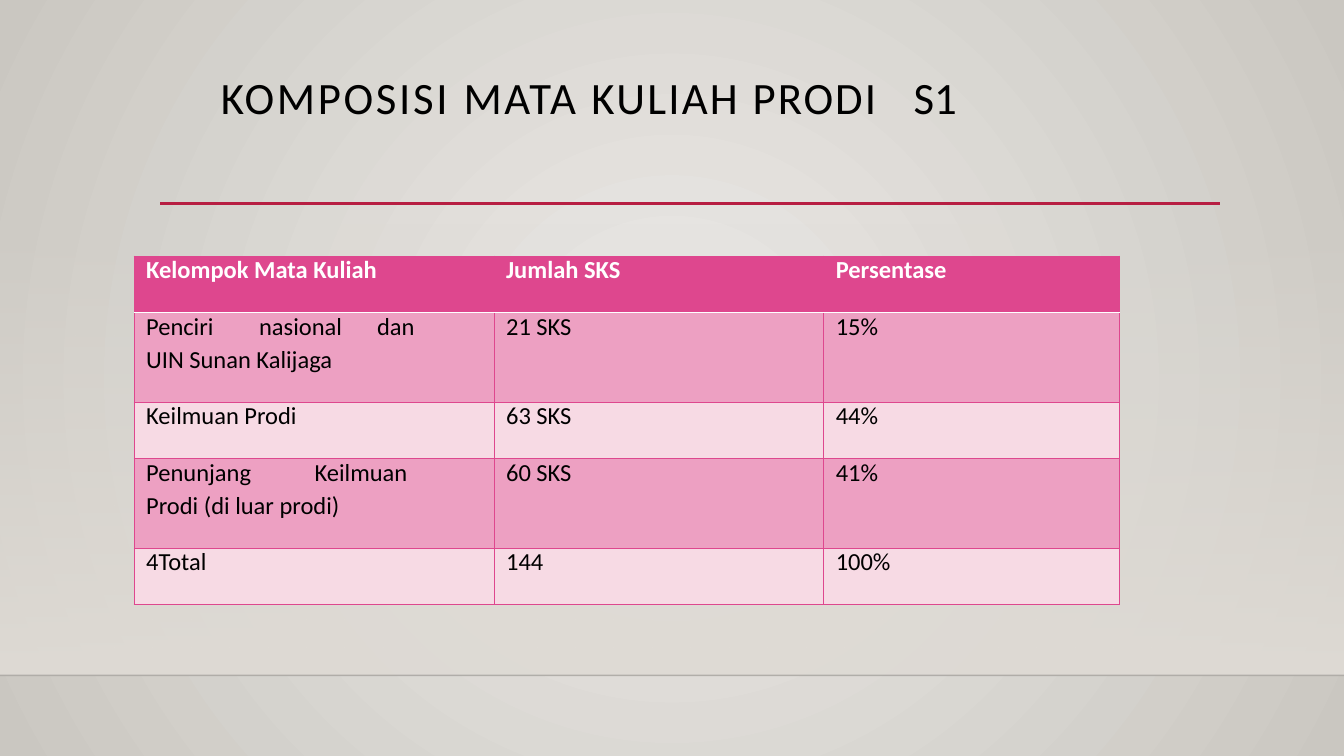
from dataclasses import dataclass

from lxml.etree import SubElement
from pptx import Presentation
from pptx.dml.color import RGBColor
from pptx.enum.shapes import MSO_CONNECTOR, MSO_SHAPE
from pptx.enum.text import MSO_ANCHOR, MSO_AUTO_SIZE, PP_ALIGN
from pptx.oxml import parse_xml
from pptx.oxml.ns import nsdecls, qn
from pptx.util import Inches, Pt


@dataclass(frozen=True)
class Theme:
    """Colours, font and type sizes of the slide."""
    font: str = "Calibri"
    title_size: float = 32
    table_size: float = 17.5
    text: str = "000000"
    white: str = "FFFFFF"
    accent: str = "B71E42"
    pink: str = "DE478E"
    pink_mid: str = "EDA0C2"
    pink_light: str = "F7DAE4"
    glow: str = "ECEAE7"
    edge: str = "CAC7C1"
    floor: str = "DFDBD5"


T = Theme()
TITLE = [("KOMPOSISI ", 1.9), ("MATA ", 1.8), ("KULIAH ", 1.6),
         ("PRODI", 1.4), (" ", 18), ("S1", 0)]
COLS = [3.57, 3.27, 2.93]
ROWS = [0.56, 0.89, 0.56, 0.89, 0.56]
CELLS = [
    ["Kelompok Mata Kuliah", "Jumlah SKS", "Persentase"],
    ["Penciri\tnasional\tdan\nUIN Sunan Kalijaga", "21 SKS", "15%"],
    ["Keilmuan Prodi", "63 SKS", "44%"],
    ["Penunjang\tKeilmuan\nProdi (di luar prodi)", "60 SKS", "41%"],
    ["4Total", "144", "100%"],
]
TABS = {1: [1.12, 2.29], 3: [1.67]}


def rgb(color):
    """Turn a hex string into a colour."""
    return RGBColor.from_string(color)


def gradient(stops, direction):
    """Build a gradient fill from (position, colour, opacity) stops."""
    gs = "".join(f'<a:gs pos="{pos * 1000}"><a:srgbClr val="{color}">'
                 f'<a:alpha val="{alpha * 1000}"/></a:srgbClr></a:gs>'
                 for pos, color, alpha in stops)
    return parse_xml(f'<a:gradFill {nsdecls("a")} rotWithShape="1">'
                     f'<a:gsLst>{gs}</a:gsLst>{direction}</a:gradFill>')


def style_font(font, size, color, bold=False):
    """Apply the theme font."""
    font.name, font.size, font.bold = T.font, Pt(size), bold
    font.color.rgb = rgb(color)


def add_rule(s, x, y, w, color, weight, alpha=100):
    """Draw a horizontal line."""
    ln = s.shapes.add_connector(MSO_CONNECTOR.STRAIGHT, Inches(x), Inches(y),
                                Inches(x + w), Inches(y))
    ln.line.color.rgb = rgb(color)
    ln.line.width = Pt(weight)
    SubElement(ln._element.spPr, qn("a:effectLst"))
    if alpha < 100:
        clr = ln._element.spPr.find(".//" + qn("a:srgbClr"))
        SubElement(clr, qn("a:alpha")).set("val", str(alpha * 1000))


def add_backdrop(s, x, y, w, h):
    """Paint the background, the fading wall and the floor edge."""
    s.background.fill.solid()
    bg = s._element.cSld.find(".//" + qn("p:bgPr"))
    centre = ('<a:path path="circle"><a:fillToRect l="50000" t="50000" '
              'r="50000" b="50000"/></a:path>')
    bg.replace(bg[0], gradient([(0, T.glow, 100), (100, T.edge, 100)], centre))
    wall = s.shapes.add_shape(MSO_SHAPE.RECTANGLE, Inches(x), Inches(y),
                              Inches(w), Inches(h))
    wall.shadow.inherit = False
    wall.line.fill.background()
    wall.fill.solid()
    pr = wall._element.spPr
    pr.replace(pr.find(qn("a:solidFill")),
               gradient([(0, T.floor, 0), (100, T.floor, 100)],
                        '<a:lin ang="5400000" scaled="0"/>'))
    add_rule(s, x, y + h, w, T.text, 1, 20)


def add_title(s, x, y, w, h):
    """Fill the title placeholder with tracked runs."""
    sp = s.shapes.title
    sp.left, sp.top, sp.width, sp.height = map(Inches, (x, y, w, h))
    tf = sp.text_frame
    tf.margin_left = tf.margin_right = tf.margin_bottom = 0
    tf.margin_top = Inches(0.01)
    tf.vertical_anchor = MSO_ANCHOR.TOP
    tf.auto_size = MSO_AUTO_SIZE.SHAPE_TO_FIT_TEXT
    p = tf.paragraphs[0]
    p.alignment = PP_ALIGN.CENTER
    style_font(p.font, T.title_size, T.text)
    for text, spacing in TITLE:
        r = p.add_run()
        r.text = text
        r.font._element.set("spc", str(round(spacing * 100)))


def set_borders(cell, header, after_header):
    """Outline a cell, with a white rule below the header."""
    pr = cell._tc.get_or_add_tcPr()
    edges = {side: (T.pink, 0.75) for side in "LRTB"}
    if header:
        edges["B"] = (T.white, 1.25)
    if after_header:
        edges["T"] = (T.white, 1.25)
    for i, (side, (color, weight)) in enumerate(edges.items()):
        pr.insert(i, parse_xml(
            f'<a:ln{side} {nsdecls("a")} w="{Pt(weight)}"><a:solidFill>'
            f'<a:srgbClr val="{color}"/></a:solidFill></a:ln{side}>'))


def fill_cell(cell, text, tabs, header):
    """Write the lines of one cell."""
    cell.margin_left = cell.margin_right = cell.margin_top = cell.margin_bottom = 0
    tf = cell.text_frame
    for i, line in enumerate(text.split("\n")):
        p = tf.add_paragraph() if i else tf.paragraphs[0]
        pr = p._p.get_or_add_pPr()
        pr.set("marL", str(Inches(0.12)))
        if "\t" in line:
            lst = SubElement(pr, qn("a:tabLst"))
            for pos in tabs:
                tab = SubElement(lst, qn("a:tab"))
                tab.set("pos", str(Inches(pos)))
                tab.set("algn", "l")
        if i:
            p.space_before = Pt(2.4)
        else:
            p.line_spacing = Pt(20.9)
        p.add_run().text = line
        style_font(p.font, T.table_size, T.white if header else T.text, header)


def add_course_table(s, x, y):
    """Build the table of course groups."""
    tbl = s.shapes.add_table(len(ROWS), len(COLS), Inches(x), Inches(y),
                             Inches(sum(COLS)), Inches(sum(ROWS))).table
    for col, w in zip(tbl.columns, COLS):
        col.width = Inches(w)
    for i, (row, h) in enumerate(zip(tbl.rows, ROWS)):
        row.height = Inches(h)
        fill = T.pink if i == 0 else T.pink_mid if i % 2 else T.pink_light
        for cell, text in zip(row.cells, CELLS[i]):
            fill_cell(cell, text, TABS.get(i, []), i == 0)
            cell.fill.solid()
            cell.fill.fore_color.rgb = rgb(fill)
            set_borders(cell, i == 0, i == 1)


def main():
    """Build and save the slide."""
    prs = Presentation()
    prs.slide_width, prs.slide_height = Inches(13.33), Inches(7.5)
    s = prs.slides.add_slide(prs.slide_layouts[5])
    add_backdrop(s, 0, 2.21, 13.33, 4.49)
    add_rule(s, 1.59, 2.02, 10.51, T.accent, 2.5)
    add_title(s, 1.17, 0.68, 9.34, 0.55)
    add_course_table(s, 1.33, 2.54)
    prs.save("out.pptx")


if __name__ == "__main__":
    main()
